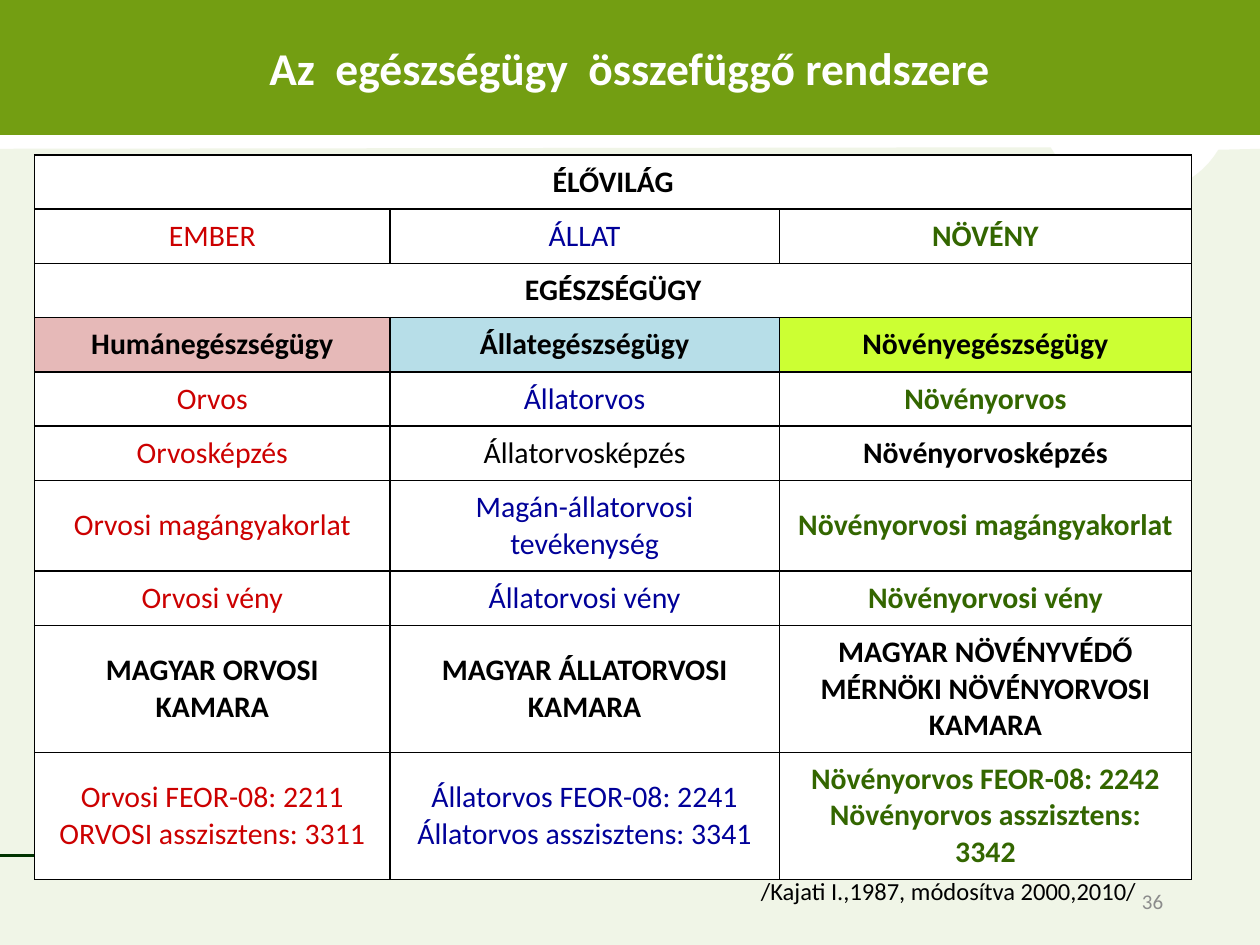
from lxml import etree
from pptx import Presentation
from pptx import util as u
from pptx.dml.color import RGBColor
from pptx.enum import shapes, text
from pptx.oxml.ns import qn


def rgb(value):
    return RGBColor.from_string(value)


def style(tf, size, color, bold=False, align=text.PP_ALIGN.CENTER):
    for p in tf.paragraphs:
        p.alignment = align
        for r in p.runs:
            r.font.name, r.font.size, r.font.bold = "Calibri", u.Pt(size), bold
            r.font.color.rgb = rgb(color)


prs = Presentation()
prs.slide_width, prs.slide_height = u.Cm(25.4), u.Cm(19.05)
s = prs.slides.add_slide(prs.slide_layouts[6])

# Pale background with a curved notch at the top right
notch = [(21.18, 2.97), (21.95, 4.34), (23.88, 4.17), (24.56, 3.02)]
curve = []
for i in range(25):
    t = i / 24
    weights = ((1 - t) ** 3, 3 * t * (1 - t) ** 2, 3 * t * t * (1 - t), t ** 3)
    curve.append(tuple(sum(w * pt[axis] for w, pt in zip(weights, notch)) for axis in (0, 1)))
outline = curve + [(25.4, 3), (25.4, 19.05), (0, 19.05)]
fb = s.shapes.build_freeform(0, u.Cm(3), scale=1.0)
fb.add_line_segments([(u.Cm(x), u.Cm(y)) for x, y in outline], close=True)
sp = fb.convert_to_shape()
sp.shadow.inherit = False
sp.line.fill.background()
sp.fill.solid()
sp.fill.fore_color.rgb = rgb("EBF1DE")
clr = sp.fill._xPr.find(qn("a:solidFill"))[0]
etree.SubElement(clr, qn("a:alpha"), val="70000")

# Footer line
line = s.shapes.add_connector(shapes.MSO_CONNECTOR.STRAIGHT, 0, u.Cm(17.25), u.Cm(23.29), u.Cm(17.25))
line.line.color.rgb = rgb("003300")
line.line.width = u.Pt(1.5)
etree.SubElement(line._element.spPr, qn("a:effectLst"))

# Title band
sp = s.shapes.add_shape(shapes.MSO_SHAPE.RECTANGLE, 0, 0, u.Cm(25.4), u.Cm(2.72))
sp.shadow.inherit = False
sp.fill.solid()
sp.fill.fore_color.rgb = rgb("739E12")
sp.line.fill.background()
tf = sp.text_frame
tf.text = "Az  egészségügy  összefüggő rendszere"
tf.vertical_anchor = text.MSO_ANCHOR.MIDDLE
style(tf, 26, "FFFFFF", True)

# Table content; a single entry spans the whole row
rows = [
    ["ÉLŐVILÁG"],
    ["EMBER", "ÁLLAT", "NÖVÉNY"],
    ["EGÉSZSÉGÜGY"],
    ["Humánegészségügy", "Állategészségügy", "Növényegészségügy"],
    ["Orvos", "Állatorvos", "Növényorvos"],
    ["Orvosképzés", "Állatorvosképzés", "Növényorvosképzés"],
    ["Orvosi magángyakorlat", "Magán-állatorvosi tevékenység", "Növényorvosi magángyakorlat"],
    ["Orvosi vény", "Állatorvosi vény", "Növényorvosi vény"],
    ["MAGYAR ORVOSI KAMARA", "MAGYAR ÁLLATORVOSI KAMARA",
     "MAGYAR NÖVÉNYVÉDŐ MÉRNÖKI NÖVÉNYORVOSI KAMARA"],
    ["Orvosi FEOR-08: 2211\nORVOSI asszisztens: 3311",
     "Állatorvos FEOR-08: 2241\nÁllatorvos asszisztens: 3341",
     "Növényorvos FEOR-08: 2242\nNövényorvos asszisztens: 3342"],
]
column_colors = ["CC0000", "000099", "336600"]
header_fills = ["E6B9B8", "B7DEE8", "CCFF33"]
header_row, training_row = 3, 5
bold_rows = {0, 2, header_row, 8}
widths = [7.16, 7.85, 8.31]
heights = {6: 1.75, 8: 2.46, 9: 1.75}

tbl = s.shapes.add_table(len(rows), 3, u.Cm(0.7), u.Cm(3.12), u.Cm(sum(widths)), u.Cm(13.5)).table
for col, width in zip(tbl.columns, widths):
    col.width = u.Cm(width)
for i, row in enumerate(rows):
    tbl.rows[i].height = u.Cm(heights.get(i, 1.07))
    if len(row) == 1:
        tbl.cell(i, 0).merge(tbl.cell(i, 2))
    for j in range(3):
        cell = tbl.cell(i, j)
        cell.margin_left = cell.margin_right = u.Cm(0.36)
        cell.margin_top = cell.margin_bottom = u.Cm(0.18)
        cell.vertical_anchor = text.MSO_ANCHOR.MIDDLE
        tcPr = cell._tc.get_or_add_tcPr()
        for side in ("lnL", "lnR", "lnT", "lnB"):
            ln = etree.SubElement(tcPr, qn("a:" + side), w="12700")
            fill = etree.SubElement(ln, qn("a:solidFill"))
            etree.SubElement(fill, qn("a:srgbClr"), val="000000")
        cell.fill.solid()
        cell.fill.fore_color.rgb = rgb(header_fills[j] if i == header_row else "FFFFFF")
        if j < len(row):
            cell.text_frame.text = row[j]
            black = i in bold_rows or (i == training_row and j > 0)
            style(cell.text_frame, 17, "000000" if black else column_colors[j],
                  i in bold_rows or j == 2)

# Slide number and source note
notes = [
    ("36", 18.21, 17.65, 5.49, 1.02, 12, "8C8C8C", text.PP_ALIGN.RIGHT, text.MSO_ANCHOR.MIDDLE),
    ("/Kajati I.,1987, módosítva 2000,2010/", 15.09, 17.53, 8.61, 0.86, 14, "000000",
     text.PP_ALIGN.LEFT, text.MSO_ANCHOR.TOP),
]
for words, x, y, w, h, size, color, align, anchor in notes:
    tf = s.shapes.add_textbox(u.Cm(x), u.Cm(y), u.Cm(w), u.Cm(h)).text_frame
    tf.word_wrap = True
    tf.vertical_anchor = anchor
    tf.text = words
    style(tf, size, color, align=align)

prs.save("out.pptx")
